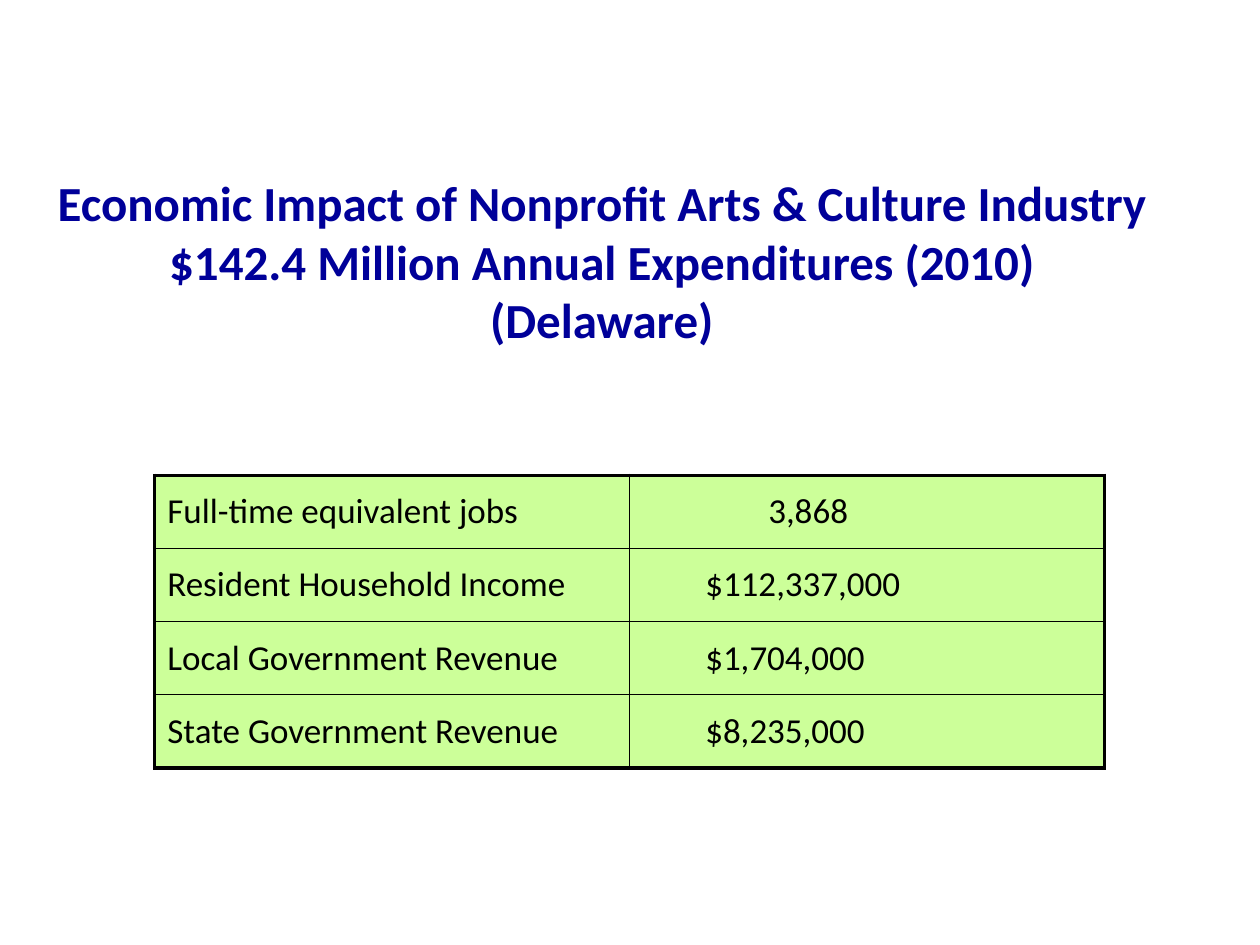
from typing import NamedTuple

from lxml import etree
from pptx import Presentation
from pptx.dml.color import RGBColor
from pptx.enum.text import MSO_ANCHOR, MSO_AUTO_SIZE, PP_ALIGN
from pptx.oxml.ns import qn
from pptx.util import Cm, Pt

MIDDLE = MSO_ANCHOR.MIDDLE
NO_FIT = MSO_AUTO_SIZE.NONE
CENTER = PP_ALIGN.CENTER

FONT = "Calibri"
COLORS = {"title": "000099", "text": "000000", "cell": "CCFF99", "border": "000000"}
THICK, THIN = Pt(2.25), Pt(1)


class Impact(NamedTuple):
    label: str
    value: str
    indent: float = 1.27  # left indent of the value, in cm


IMPACTS = [
    Impact("Full-time equivalent jobs", "3,868", 2.54),
    Impact("Resident Household Income", "$112,337,000"),
    Impact("Local Government Revenue", "$1,704,000"),
    Impact("State Government Revenue", "$8,235,000"),
]
TITLE_LINES = [
    "Economic Impact of Nonprofit Arts & Culture Industry",
    "$142.4 Million Annual Expenditures (2010)\v(Delaware)",
]


def style_font(p, size: float, color: str, bold: bool = False) -> None:
    p.font.name = FONT
    p.font.size = Pt(size)
    p.font.bold = bold
    p.font.color.rgb = RGBColor.from_string(COLORS[color])


def set_borders(cell, widths: dict[str, int]) -> None:
    tc_pr = cell._tc.get_or_add_tcPr()
    for i, (side, width) in enumerate(widths.items()):
        ln = etree.Element(qn(f"a:ln{side}"), w=str(width))
        fill = etree.SubElement(ln, qn("a:solidFill"))
        etree.SubElement(fill, qn("a:srgbClr"), val=COLORS["border"])
        tc_pr.insert(i, ln)


def fill_cell(cell, text: str, indent: float = 0) -> None:
    cell.vertical_anchor = MIDDLE
    cell.fill.solid()
    cell.fill.fore_color.rgb = RGBColor.from_string(COLORS["cell"])
    p = cell.text_frame.paragraphs[0]
    p.text = text
    if indent:
        p._p.get_or_add_pPr().set("marL", str(Cm(indent)))
    style_font(p, 20, "text")


def add_title(s) -> None:
    sp = s.shapes.title
    sp.left, sp.top, sp.width, sp.height = Cm(0.08), Cm(3.66), Cm(24.1), Cm(3.18)
    tf = sp.text_frame
    tf.word_wrap = True
    tf.auto_size = NO_FIT
    tf.vertical_anchor = MIDDLE
    tf.text = "\n".join(TITLE_LINES)
    for p in tf.paragraphs:
        p.alignment = CENTER
        style_font(p, 28, "title", bold=True)


def add_impact_table(s, impacts: list[Impact]) -> None:
    last = len(impacts) - 1
    table = s.shapes.add_table(
        len(impacts), 2, Cm(3.12), Cm(9.58), Cm(19.15), Cm(5.9)
    ).table
    table.first_row = table.horz_banding = False
    for i, impact in enumerate(impacts):
        label, value = table.cell(i, 0), table.cell(i, 1)
        fill_cell(label, impact.label)
        fill_cell(value, impact.value, impact.indent)
        # Thick outer frame, thin inner grid
        top = THICK if i == 0 else THIN
        bottom = THICK if i == last else THIN
        set_borders(label, {"L": THICK, "R": THIN, "T": top, "B": bottom})
        set_borders(value, {"L": THIN, "R": THICK, "T": top, "B": bottom})


def main() -> None:
    prs = Presentation()
    prs.slide_width, prs.slide_height = Cm(25.4), Cm(19.05)
    s = prs.slides.add_slide(prs.slide_layouts[5])  # title only
    add_title(s)
    add_impact_table(s, IMPACTS)
    prs.save("out.pptx")


if __name__ == "__main__":
    main()
